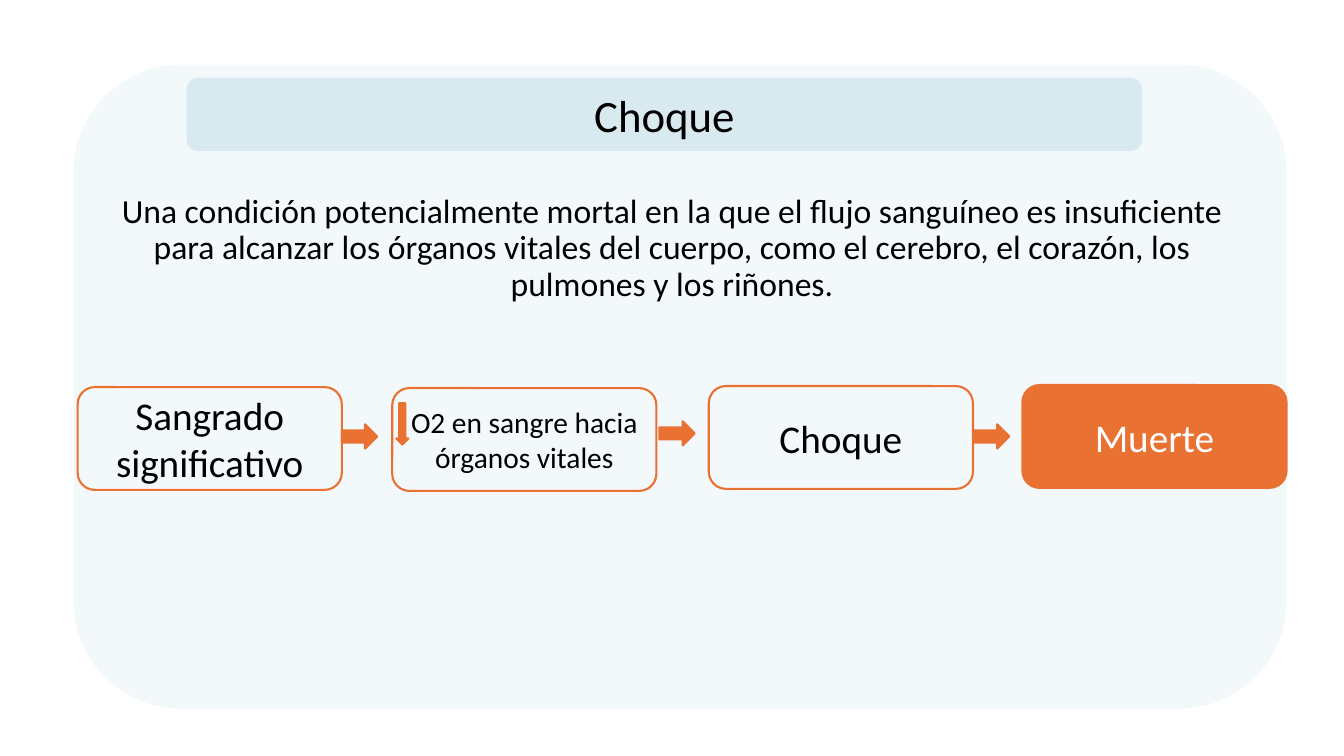
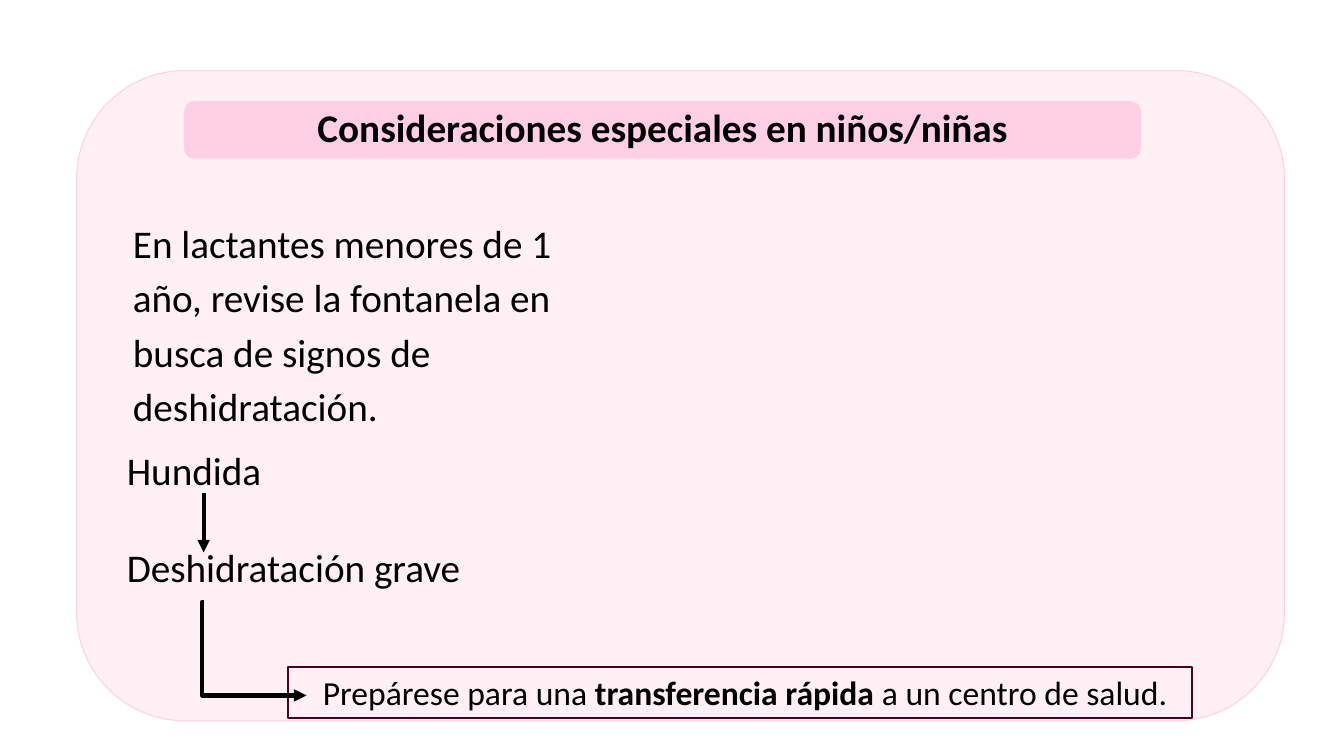
from dataclasses import dataclass

from pptx import Presentation
from pptx import util as u
from pptx.dml.color import RGBColor
from pptx.enum import shapes, text
from pptx.oxml.ns import qn
from lxml import etree

FONT = "Calibri"
BLACK, WHITE = "000000", "FFFFFF"
BLUE, PINK, ORANGE, WINE = "D8EAEF", "FFCFE4", "E97132", "4A001F"
PANEL_OPACITY = 30
SHAPE = shapes.MSO_SHAPE
CENTER, LEFT = text.PP_ALIGN.CENTER, text.PP_ALIGN.LEFT


@dataclass
class Area:
    left: float
    top: float
    width: float
    height: float

    def lengths(self):
        return [u.Inches(n) for n in (self.left, self.top, self.width, self.height)]


@dataclass
class Step:
    label: str
    left: float
    top: float
    size: int = 28
    fill: str | None = None
    color: str = BLACK


@dataclass
class Arrow:
    kind: shapes.MSO_SHAPE
    area: Area


@dataclass
class Note:
    words: str
    area: Area
    size: int = 28
    align: text.PP_ALIGN = LEFT
    spacing: float = 1.15


# Shared helpers
def rgb(color: str) -> RGBColor:
    return RGBColor.from_string(color)


def add_panel_shape(page, kind, area: Area, fill: str | None = None,
                    line: str | None = None, weight: float = 1.5):
    shape = page.shapes.add_shape(kind, *area.lengths())
    shape.shadow.inherit = False
    if fill:
        shape.fill.solid()
        shape.fill.fore_color.rgb = rgb(fill)
    else:
        shape.fill.background()
    if line:
        shape.line.color.rgb = rgb(line)
        shape.line.width = u.Pt(weight)
    else:
        shape.line.fill.background()
    return shape


def write(box, words: str | list[tuple[str, bool]], size: int, color: str = BLACK,
          bold: bool = False, align=CENTER, spacing: float | None = None,
          anchor=text.MSO_ANCHOR.MIDDLE):
    frame = box.text_frame
    frame.word_wrap = True
    frame.vertical_anchor = anchor
    para = frame.paragraphs[0]
    para.alignment = align
    if spacing:
        para.line_spacing = spacing
    for part, strong in [(words, bold)] if isinstance(words, str) else words:
        span = para.add_run()
        span.text = part
        span.font.name = FONT
        span.font.size = u.Pt(size)
        span.font.bold = strong
        span.font.color.rgb = rgb(color)
    return para


def add_note(page, note: Note) -> None:
    box = page.shapes.add_textbox(*note.area.lengths())
    write(box, note.words, note.size, align=note.align, spacing=note.spacing,
          anchor=text.MSO_ANCHOR.TOP)


def add_page(deck, panel: Area, color: str, line: str | None = None):
    page = deck.slides.add_slide(deck.slide_layouts[6])
    shape = add_panel_shape(page, SHAPE.ROUNDED_RECTANGLE, panel, color, line, 0.75)
    tint = shape.fill._xPr.find(qn("a:solidFill"))[0]
    etree.SubElement(tint, qn("a:alpha"), val=str(PANEL_OPACITY * 1000))
    return page


def add_title(page, words: str, area: Area, size: int, color: str,
              line: str | None = None, bold: bool = False,
              spacing: float | None = None) -> None:
    band = add_panel_shape(page, SHAPE.ROUNDED_RECTANGLE, area, color, line, 0.75)
    write(band, words, size, bold=bold, spacing=spacing)


def add_arrow_line(page, kind, start: tuple, end: tuple, bend: int | None = None) -> None:
    points = [u.Inches(n) for n in (*start, *end)]
    line = page.shapes.add_connector(kind, *points)
    line.line.color.rgb = rgb(BLACK)
    line.line.width = u.Pt(3)
    etree.SubElement(line.line._get_or_add_ln(), qn("a:tailEnd"), type="triangle")
    properties = line._element.spPr
    etree.SubElement(properties, qn("a:effectLst"))
    if bend is not None:
        guides = properties.find(qn("a:prstGeom")).get_or_add_avLst()
        etree.SubElement(guides, qn("a:gd"), name="adj1", fmla=f"val {bend}")


# Slide 1: shock
STEP_WIDTH, STEP_HEIGHT = 2.62, 1.02
STEPS = [
    Step("Sangrado significativo", 0.77, 3.84),
    Step("O2 en sangre hacia órganos vitales", 3.89, 3.85, size=21),
    Step("Choque", 7.03, 3.83),
    Step("Muerte", 10.14, 3.82, fill=ORANGE, color=WHITE),
]
ARROWS = [Arrow(SHAPE.RIGHT_ARROW, Area(left, top, 0.35, 0.24))
          for left, top in ((3.39, 4.21), (6.54, 4.18), (9.66, 4.21))]
ARROWS.append(Arrow(SHAPE.DOWN_ARROW, Area(3.93, 4, 0.12, 0.41)))
DEFINITION = Note(
    "Una condición potencialmente mortal en la que el flujo sanguíneo es insuficiente "
    "para alcanzar los órganos vitales del cuerpo, como el cerebro, el corazón, "
    "los pulmones y los riñones.",
    Area(1.05, 1.88, 11.23, 4.85), 24, CENTER, 0.9)


def build_shock(deck) -> None:
    page = add_page(deck, Area(0.73, 0.64, 12.03, 6.39), BLUE)
    add_note(page, DEFINITION)
    add_title(page, "Choque", Area(1.85, 0.77, 9.48, 0.73), 32, BLUE)
    for step in STEPS:
        area = Area(step.left, step.top, STEP_WIDTH, STEP_HEIGHT)
        box = add_panel_shape(page, SHAPE.ROUNDED_RECTANGLE, area, step.fill, ORANGE)
        write(box, step.label, step.size, step.color)
    for arrow in ARROWS:
        add_panel_shape(page, arrow.kind, arrow.area, ORANGE, ORANGE)


# Slide 2: children
CHILD_NOTES = [
    Note("En lactantes menores de 1 año, revise la fontanela en busca de signos de "
         "deshidratación.", Area(1.22, 2.06, 4.92, 2.09)),
    Note("Hundida", Area(1.16, 4.31, 4.46, 2.03)),
    Note("Deshidratación grave", Area(1.16, 5.27, 4.46, 2.03)),
]
TRANSFER = [("Prepárese para una ", False), ("transferencia rápida", True),
            (" a un centro de salud.", False)]


def build_children(deck) -> None:
    page = add_page(deck, Area(0.76, 0.7, 11.98, 6.45), PINK, PINK)
    add_title(page, "Consideraciones especiales en niños/niñas",
              Area(1.83, 1.01, 9.48, 0.56), 28, PINK, PINK, bold=True, spacing=0.9)
    for note in CHILD_NOTES:
        add_note(page, note)
    box = add_panel_shape(page, SHAPE.RECTANGLE, Area(2.86, 6.62, 8.96, 0.5), line=WINE)
    para = write(box, TRANSFER, 24)
    para._p.get_or_add_pPr().set("marL", str(u.Inches(0.1)))
    kinds = shapes.MSO_CONNECTOR
    add_arrow_line(page, kinds.STRAIGHT, (2.02, 4.89), (2.02, 5.48))
    add_arrow_line(page, kinds.ELBOW, (2.02, 5.97), (3.04, 6.9), bend=-1500)


def main() -> None:
    deck = Presentation()
    deck.slide_width, deck.slide_height = u.Inches(13.33), u.Inches(7.5)
    build_shock(deck)
    build_children(deck)
    deck.save("out.pptx")


if __name__ == "__main__":
    main()
